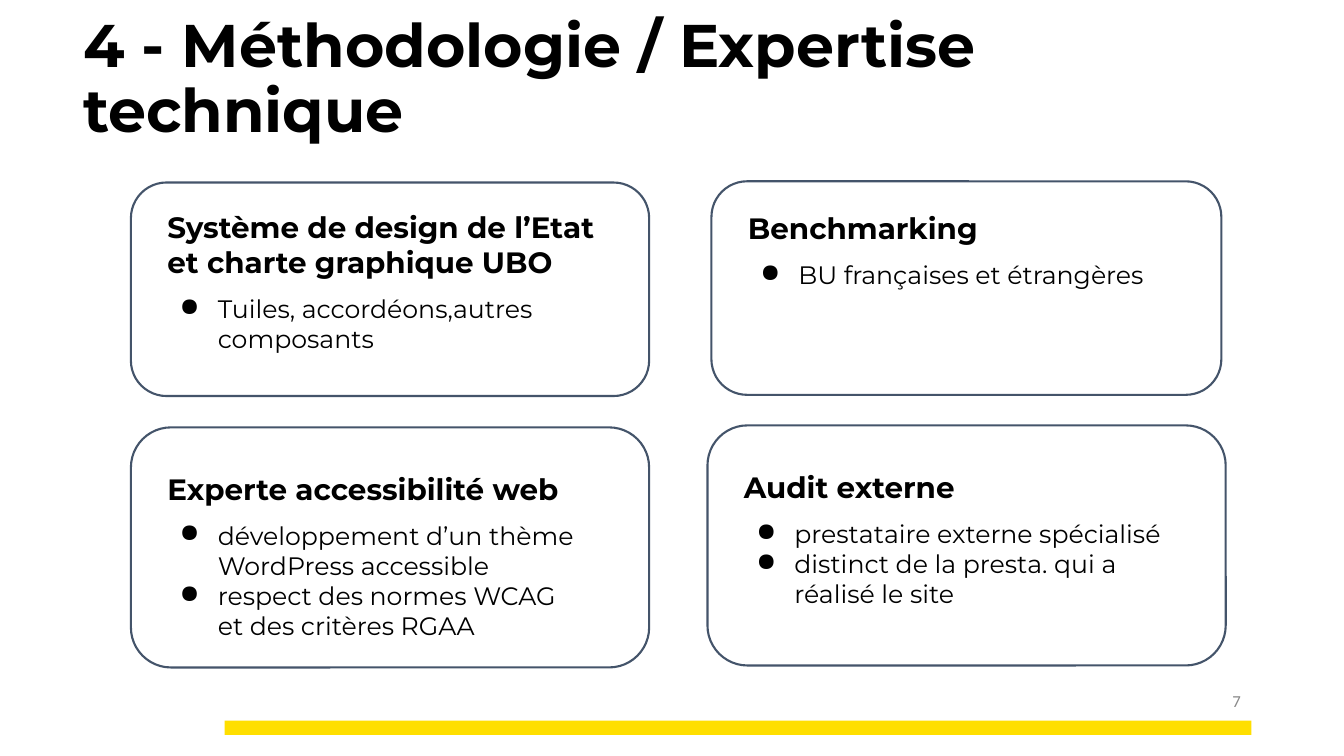
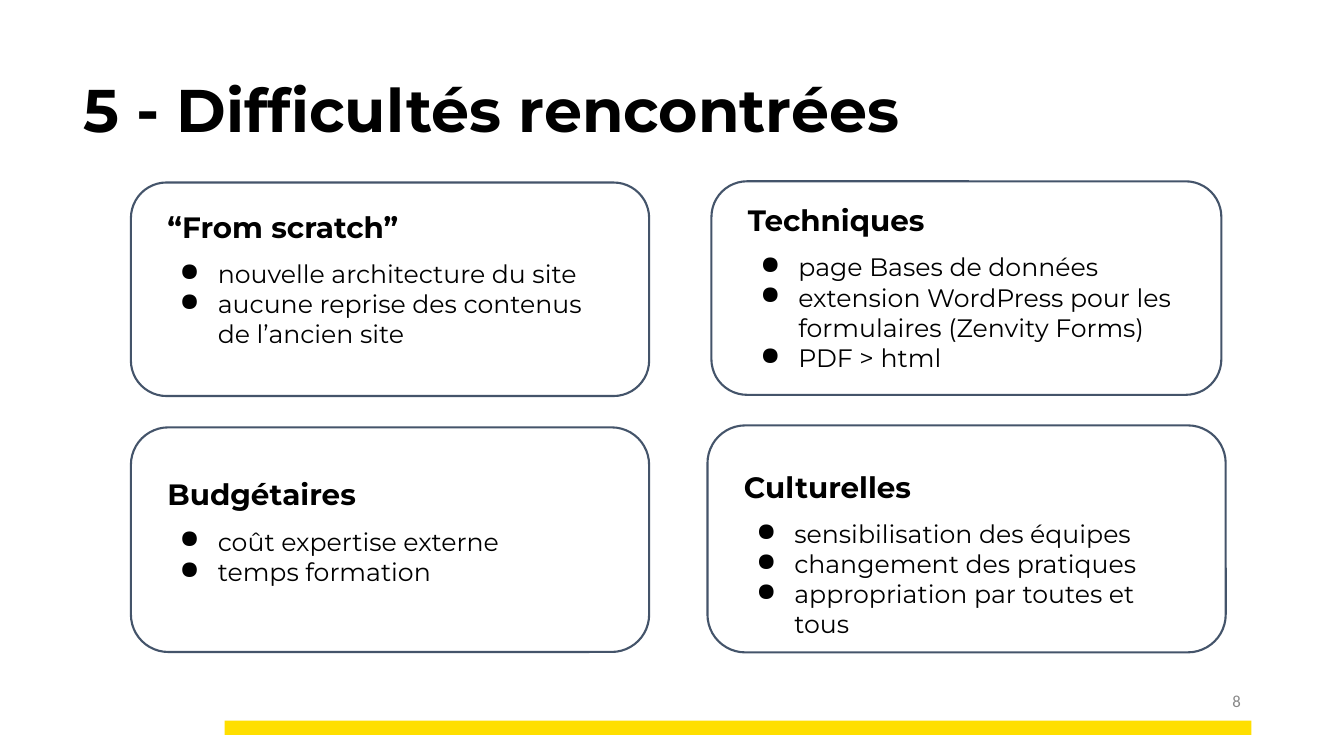
from dataclasses import dataclass

from lxml import etree
from pptx import Presentation
from pptx import util as u
from pptx.dml.color import RGBColor
from pptx.enum import shapes, text
from pptx.oxml.ns import qn

BLACK = RGBColor(0x00, 0x00, 0x00)
WHITE = RGBColor(0xFF, 0xFF, 0xFF)
GREY = RGBColor(0x88, 0x88, 0x88)
SLATE = RGBColor(0x44, 0x54, 0x6A)
YELLOW = RGBColor(0xFF, 0xDF, 0x00)
FONT = "Montserrat"
NUMBER_FONT = "Calibri"
TEXT_INSET = 0.67


@dataclass(frozen=True)
class Area:
    left: float
    top: float
    width: float
    height: float

    def lengths(self) -> tuple:
        return tuple(u.Cm(n) for n in (self.left, self.top, self.width, self.height))


@dataclass(frozen=True)
class Card:
    frame: Area
    heading: str
    bullets: tuple[str, ...]
    text_drop: float
    text_width: float = 11.76
    text_height: float = 4.8


@dataclass(frozen=True)
class Topic:
    number: int
    title: str
    cards: tuple[Card, ...]


BAND = Area(5.66, 18.16, 25.88, 0.36)
PAGE_NUMBER = Area(30.05, 17.15, 1.47, 1.02)
TITLE = Area(1.85, 1.35, 29.54, 2.44)
TOP_LEFT = Area(3.3, 4.6, 13.06, 5.38)
TOP_RIGHT = Area(17.93, 4.57, 12.85, 5.38)


def bottom_left(height: float) -> Area:
    return Area(3.3, 10.77, 13.06, height)


def bottom_right(height: float) -> Area:
    return Area(17.83, 10.72, 13.06, height)


TOPICS = (
    Topic(7, "4 - Méthodologie / Expertise technique", (
        Card(TOP_RIGHT, "Benchmarking", ("BU françaises et étrangères",), 0.48),
        Card(bottom_left(6.05), "Experte accessibilité web",
             ("développement d’un thème WordPress accessible",
              "respect des normes WCAG et des critères RGAA"), 0.84, 10.97, 4.75),
        Card(bottom_right(6.05), "Audit externe",
             ("prestataire externe spécialisé",
              "distinct de la presta. qui a réalisé le site"), 0.84),
        Card(TOP_LEFT, "Système de design de l’Etat et charte graphique UBO",
             ("Tuiles, accordéons,autres composants",), 0.41),
    )),
    Topic(8, "5 - Difficultés rencontrées", (
        Card(TOP_RIGHT, "Techniques",
             ("page Bases de données",
              "extension WordPress pour les formulaires (Zenvity Forms)",
              "PDF > html"), 0.28),
        Card(bottom_left(5.66), "Budgétaires",
             ("coût expertise externe", "temps formation"), 0.99, 9.96, 3.91),
        Card(bottom_right(5.72), "Culturelles",
             ("sensibilisation des équipes", "changement des pratiques",
              "appropriation par toutes et tous"), 0.84),
        Card(TOP_LEFT, "“From scratch”",
             ("nouvelle architecture du site",
              "aucune reprise des contenus de l’ancien site"), 0.41, 10.95, 4.42),
    )),
)


def add_box(page, area: Area, margin: float, anchor):
    frame = page.shapes.add_textbox(*area.lengths()).text_frame
    frame.word_wrap = True
    frame.vertical_anchor = anchor
    frame.margin_left = frame.margin_right = u.Cm(0.25)
    frame.margin_top = frame.margin_bottom = u.Cm(margin)
    return frame


def write(para, words: str, size: int, bold: bool = False,
          color: RGBColor = BLACK, font: str = FONT) -> None:
    para.text = words
    for span in para.runs:
        span.font.name = font
        span.font.size = u.Pt(size)
        span.font.bold = bold
        span.font.color.rgb = color


def make_bullet(para) -> None:
    props = para._p.get_or_add_pPr()
    props.set("marL", str(u.Cm(1.27)))
    props.set("indent", str(-u.Cm(0.96)))
    tint = etree.SubElement(props, qn("a:buClr"))
    etree.SubElement(tint, qn("a:srgbClr"), val=str(BLACK))
    etree.SubElement(props, qn("a:buChar"), char="●")


def add_shape(page, preset, area: Area, fill: RGBColor):
    shape = page.shapes.add_shape(preset, *area.lengths())
    shape.shadow.inherit = False
    shape.fill.solid()
    shape.fill.fore_color.rgb = fill
    return shape


def add_card(page, card: Card) -> None:
    outline = add_shape(page, shapes.MSO_SHAPE.ROUNDED_RECTANGLE, card.frame, WHITE)
    outline.line.color.rgb = SLATE
    outline.line.width = u.Pt(1.5)
    area = Area(card.frame.left + TEXT_INSET, card.frame.top + card.text_drop,
                card.text_width, card.text_height)
    box = add_box(page, area, 0.25, text.MSO_ANCHOR.TOP)
    write(box.paragraphs[0], card.heading, 21, bold=True)
    for index, words in enumerate(card.bullets):
        para = box.add_paragraph()
        para.space_before = u.Pt(0 if index else 10)
        make_bullet(para)
        write(para, words, 18)


def add_page(deck, topic: Topic) -> None:
    page = deck.slides.add_slide(deck.slide_layouts[6])
    band = add_shape(page, shapes.MSO_SHAPE.RECTANGLE, BAND, YELLOW)
    band.line.fill.background()
    number = add_box(page, PAGE_NUMBER, 0.13, text.MSO_ANCHOR.MIDDLE).paragraphs[0]
    number.alignment = text.PP_ALIGN.RIGHT
    write(number, str(topic.number), 12, color=GREY, font=NUMBER_FONT)
    title = add_box(page, TITLE, 0.13, text.MSO_ANCHOR.BOTTOM).paragraphs[0]
    title.line_spacing = 0.9
    write(title, topic.title, 43, bold=True)
    for card in topic.cards:
        add_card(page, card)


def main() -> None:
    deck = Presentation()
    deck.slide_width, deck.slide_height = u.Cm(33.87), u.Cm(19.05)
    for topic in TOPICS:
        add_page(deck, topic)
    deck.save("out.pptx")


if __name__ == "__main__":
    main()
